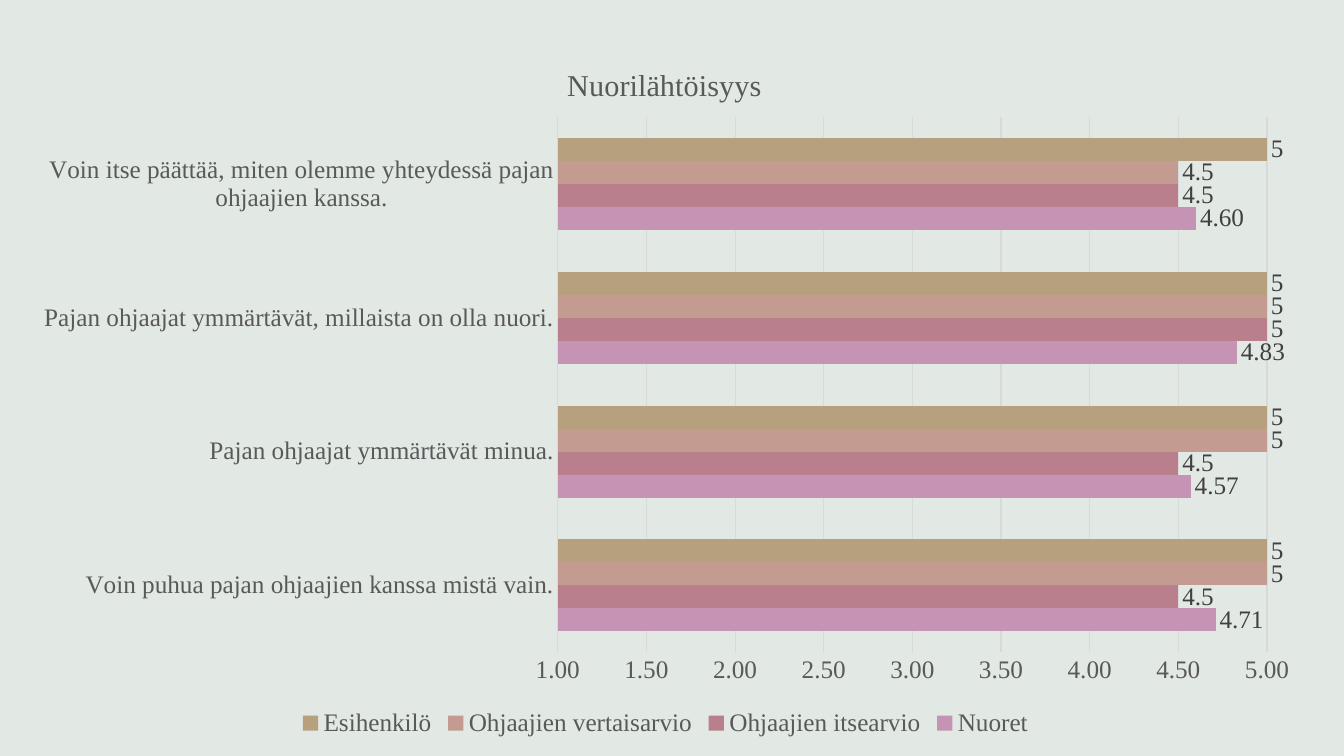
"""Build a slide with a clustered bar chart of survey ratings."""
from lxml import etree
from pptx import Presentation
from pptx.chart.data import CategoryChartData
from pptx.dml.color import RGBColor
from pptx.enum.chart import XL_CHART_TYPE, XL_LABEL_POSITION, XL_LEGEND_POSITION, XL_TICK_MARK
from pptx.oxml.ns import qn
from pptx.util import Inches, Pt

BAR_CLUSTERED = XL_CHART_TYPE.BAR_CLUSTERED
OUTSIDE_END = XL_LABEL_POSITION.OUTSIDE_END
LEGEND_BOTTOM = XL_LEGEND_POSITION.BOTTOM
NO_TICK = XL_TICK_MARK.NONE

TITLE = "Nuorilähtöisyys"
STATEMENTS = [
    "Voin puhua pajan ohjaajien kanssa mistä vain.",
    "Pajan ohjaajat ymmärtävät minua.",
    "Pajan ohjaajat ymmärtävät, millaista on olla nuori.",
    "Voin itse päättää, miten olemme yhteydessä pajan ohjaajien kanssa.",
]
RATINGS = [
    ("Nuoret", (4.71, 4.57, 4.83, 4.6), "0.00"),
    ("Ohjaajien itsearvio", (4.5, 4.5, 5, 4.5), "General"),
    ("Ohjaajien vertaisarvio", (5, 5, 5, 4.5), "General"),
    ("Esihenkilö", (5, 5, 5, 5), "General"),
]
COLORS = {
    "background": "E2E8E4",
    "text": "595959",
    "label": "404040",
    "grid": "D9D9D9",
    "Nuoret": "C593B3",
    "Ohjaajien itsearvio": "BA7F8C",
    "Ohjaajien vertaisarvio": "C49B91",
    "Esihenkilö": "B7A07D",
}
FONT = "Times New Roman"
CHART_BOX = (0.17, 0.31, 12.86, 7.05)
PLOT_LAYOUT = {"layoutTarget": "inner", "xMode": "edge", "yMode": "edge",
               "x": 0.417, "y": 0.121, "w": 0.547, "h": 0.753}
TITLE_LAYOUT = {"xMode": "edge", "yMode": "edge", "x": 0.42, "y": 0.04}
VALUE_SCALE = {"minimum_scale": 1, "maximum_scale": 5, "major_unit": 0.5}


def color(name):
    return RGBColor.from_string(COLORS[name])


def style_font(font, color_name, size=18):
    for key, value in {"name": FONT, "size": Pt(size), "bold": False}.items():
        setattr(font, key, value)
    font.color.rgb = color(color_name)


def style_line(line):
    line.color.rgb = color("grid")
    line.width = Pt(0.75)


def place(parent, index, values):
    for old in parent.findall(qn("c:layout")):
        parent.remove(old)
    layout = etree.Element(qn("c:layout"))
    manual = etree.SubElement(layout, qn("c:manualLayout"))
    for key, value in values.items():
        etree.SubElement(manual, qn(f"c:{key}")).set("val", str(value))
    parent.insert(index, layout)


def add_ratings_chart(page):
    data = CategoryChartData()
    data.categories = STATEMENTS
    for name, values, number_format in RATINGS:
        data.add_series(name, values, number_format)
    box = [Inches(length) for length in CHART_BOX]
    chart = page.shapes.add_chart(BAR_CLUSTERED, *box, data).chart
    style_font(chart.font, "text")
    return chart


def style_title(chart):
    chart.has_title = True
    para = chart.chart_title.text_frame.paragraphs[0]
    span = para.add_run()
    span.text = TITLE
    style_font(span.font, "text", 21.6)


def style_axes(chart):
    for axis in (chart.category_axis, chart.value_axis):
        axis.major_tick_mark = axis.minor_tick_mark = NO_TICK
        style_font(axis.tick_labels.font, "text")
    style_line(chart.category_axis.format.line)
    scale = chart.value_axis
    for key, value in VALUE_SCALE.items():
        setattr(scale, key, value)
    scale.format.line.fill.background()
    scale.has_major_gridlines = True
    style_line(scale.major_gridlines.format.line)
    scale.tick_labels.number_format = "0.00"
    scale.tick_labels.number_format_is_linked = False


def style_bars(chart):
    plot = chart.plots[0]
    plot.gap_width, plot.overlap, plot.vary_by_categories = 182, 0, False
    for series, (name, _, number_format) in zip(plot.series, RATINGS):
        series.format.fill.solid()
        series.format.fill.fore_color.rgb = color(name)
        labels = series.data_labels
        formats = {"show_value": True, "position": OUTSIDE_END,
                   "number_format": number_format, "number_format_is_linked": False}
        for key, value in formats.items():
            setattr(labels, key, value)
        style_font(labels.font, "label")


def style_legend(chart):
    chart.has_legend = True
    chart.legend.position = LEGEND_BOTTOM
    chart.legend.include_in_layout = False
    style_font(chart.legend.font, "text")


def main():
    deck = Presentation()
    deck.slide_width, deck.slide_height = Inches(13.33), Inches(7.5)
    page = deck.slides.add_slide(deck.slide_layouts[6])
    page.background.fill.solid()
    page.background.fill.fore_color.rgb = color("background")
    chart = add_ratings_chart(page)
    for style in (style_title, style_axes, style_bars, style_legend):
        style(chart)
    root = chart.element
    place(root.find(".//" + qn("c:title")), 1, TITLE_LAYOUT)
    place(root.find(".//" + qn("c:plotArea")), 0, PLOT_LAYOUT)
    deck.save("out.pptx")


if __name__ == "__main__":
    main()
